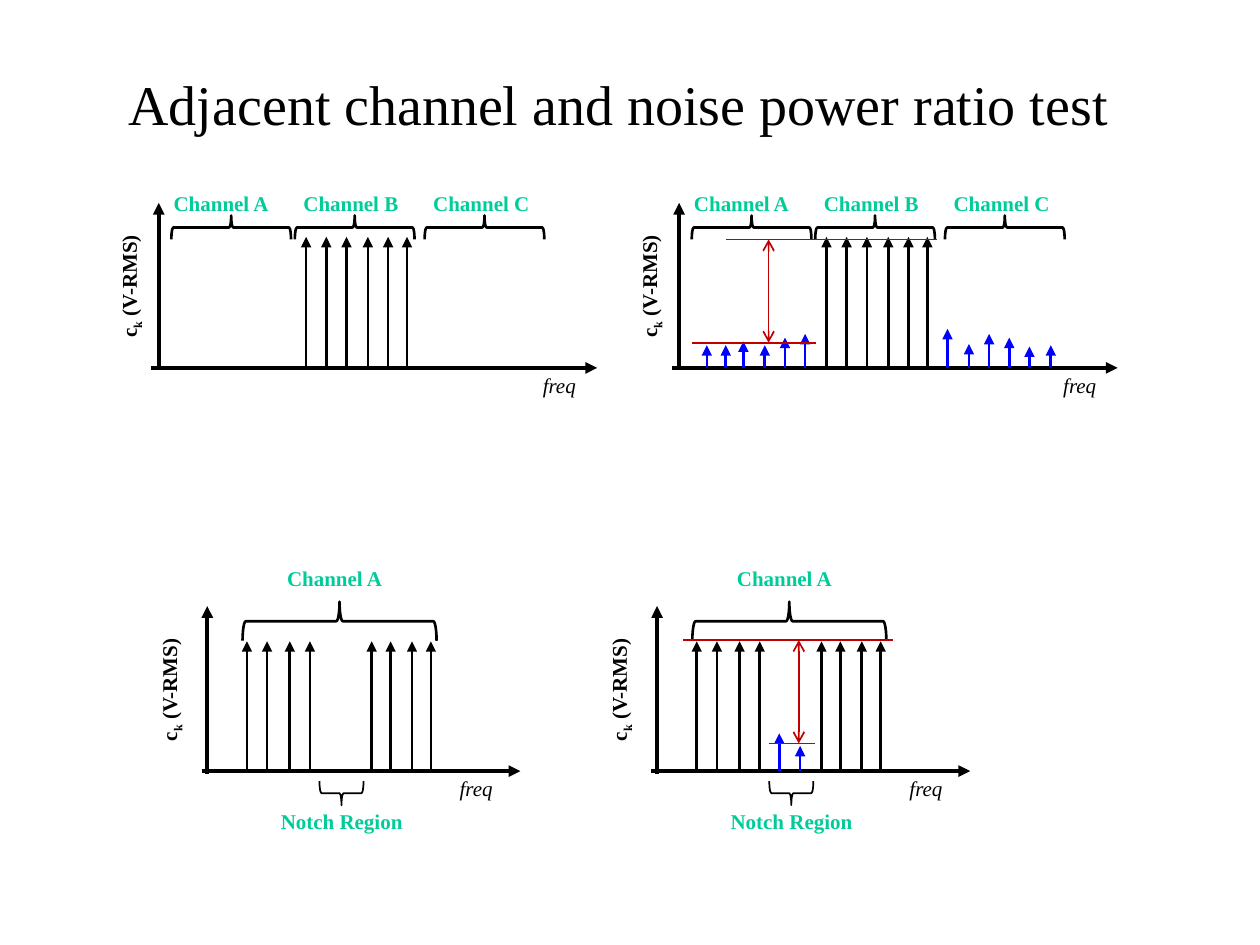
from lxml.etree import SubElement
from pptx import Presentation
from pptx.dml.color import RGBColor
from pptx.enum.shapes import MSO_CONNECTOR, MSO_SHAPE
from pptx.enum.text import MSO_ANCHOR, MSO_AUTO_SIZE, PP_ALIGN
from pptx.oxml.ns import qn
from pptx.util import Inches, Pt

INK = {"black": "000000", "blue": "0000FF", "red": "C00000", "green": "00CC99"}
FONT = "Times New Roman"
WIDE, HIGH = Inches(10), Inches(7.5)
COLS, ROWS = 100, 75


def col(n):
    """Turn grid columns into a length."""
    return round(WIDE * n / COLS)


def row(n):
    """Turn grid rows into a length."""
    return round(HIGH * n / ROWS)


def tint(name):
    """Look up a colour by name."""
    return RGBColor.from_string(INK[name])


def style(run, size, color, bold=False, slant=False):
    """Set the look of one run."""
    font = run.font
    font.name, font.size = FONT, Pt(size)
    font.bold, font.italic = bold, slant
    font.color.rgb = tint(color)


def title(slide, text):
    """Fill and place the title."""
    box = slide.shapes.title
    box.left, box.top, box.width, box.height = col(9.2), row(3.8), col(85), row(8.8)
    frame = box.text_frame
    frame.vertical_anchor = MSO_ANCHOR.MIDDLE
    para = frame.paragraphs[0]
    para.alignment = PP_ALIGN.LEFT
    run = para.add_run()
    run.text = text
    style(run, 32, "black")


def label(slide, x, y, wide, parts, color="black", bold=True, slant=False):
    """Add a text box, one run for each part and its baseline shift."""
    box = slide.shapes.add_textbox(col(x), row(y), col(wide), row(3))
    frame = box.text_frame
    frame.word_wrap = True
    frame.auto_size = MSO_AUTO_SIZE.SHAPE_TO_FIT_TEXT
    para = frame.paragraphs[0]
    for text, shift in parts:
        run = para.add_run()
        run.text = text
        style(run, 12, color, bold, slant)
        if shift:
            run.font._element.set("baseline", str(shift))
    return box


def line(slide, x1, y1, x2, y2, color="black", width=1.5, head=None, tail=None):
    """Draw a straight line with optional arrowheads."""
    link = slide.shapes.add_connector(
        MSO_CONNECTOR.STRAIGHT, col(x1), row(y1), col(x2), row(y2))
    link.line.color.rgb = tint(color)
    link.line.width = Pt(width)
    edge = link.line._get_or_add_ln()
    for tag, kind in (("a:headEnd", head), ("a:tailEnd", tail)):
        if kind:
            SubElement(edge, qn(tag), type=kind)
    SubElement(link._element.spPr, qn("a:effectLst"))


def stems(slide, xs, tops, base, color="black"):
    """Draw a row of upright arrows."""
    for x, top in zip(xs, tops):
        line(slide, x, base, x, top, color, tail="triangle")


def brace(slide, x, y, span, depth, turn=270, width=1.5):
    """Draw a turned brace centred on a point."""
    item = slide.shapes.add_shape(
        MSO_SHAPE.RIGHT_BRACE, col(x - depth / 2), row(y - span / 2),
        col(depth), row(span))
    item.rotation = turn
    item.shadow.inherit = False
    item.fill.background()
    item.line.color.rgb = tint("black")
    item.line.width = Pt(width)


def axes(slide, x, base, start, end, side, wide, freq):
    """Draw both axes of a plot and name them."""
    line(slide, x, base + 0.2, x, base - 13.1, width=2.25, tail="triangle")
    line(slide, start, base, end, base, width=2.25, tail="triangle")
    name = label(slide, side - wide / 2, base - 1.4 - wide / 2 - 1.5, wide,
                 [("c", 0), ("k", -25000), (" (V-RMS)", 0)])
    name.rotation = 270
    label(slide, freq, base - 0.1, 8, [("freq", 0)], bold=False, slant=True)


def gap(slide, x, top, low, upper, lower):
    """Mark the ratio between two levels in red."""
    line(slide, lower[0], low, lower[1], low, "red", 1)
    line(slide, x, top, x, low, "red", 1, "arrow", "arrow")
    line(slide, upper[0], top, upper[1], top, "red", 1)


def trio(slide, dx):
    """Draw a plot of three channels with tones in the middle one."""
    axes(slide, dx + 12.6, 29.2, dx + 12, dx + 47.4, dx + 10.2, 11.6, dx + 42.1)
    stems(slide, [dx + x for x in (24.3, 25.9, 27.5, 29.2, 30.8, 32.3)],
          [18.8] * 6, 29.2)
    for i, mid in enumerate((18.35, 28.15, 38.45)):
        label(slide, dx + 12.8 + 10.3 * i, 14.6, 10.3,
              [(f"Channel {'ABC'[i]}", 0)], "green")
        brace(slide, dx + mid, 18.05, 9.5, 1.9)


def notch(slide, dx):
    """Draw a plot of one channel with a notch."""
    axes(slide, dx + 16.45, 61.2, dx + 16, dx + 41.3, dx + 13.4, 14, dx + 35.5)
    stems(slide, [dx + x for x in (19.6, 21.2, 23, 24.6, 29.5, 31, 32.7, 34.2)],
          [50.9] * 8, 61.2)
    label(slide, dx + 21.8, 44.4, 10.2, [("Channel A", 0)], "green")
    brace(slide, dx + 26.95, 49.3, 15.4, 3.1)
    label(slide, dx + 21.3, 63.7, 12.9, [("Notch Region", 0)], "green")
    brace(slide, dx + 27.1, 62.95, 3.5, 1.9, 90, 1)


def main():
    """Build the slide and save it."""
    deck = Presentation()
    deck.slide_width, deck.slide_height = WIDE, HIGH
    slide = deck.slides.add_slide(deck.slide_layouts[5])
    title(slide, "Adjacent channel and noise power ratio test")
    for dx in (0, 41.3):
        trio(slide, dx)
    stems(slide, (56.1, 57.6, 59, 60.7, 62.3, 63.9),
          (27.4, 27.4, 27.1, 27.4, 26.8, 26.5), 29.2, "blue")
    stems(slide, (75.2, 76.9, 78.5, 80.1, 81.7, 83.4),
          (26.1, 27.3, 26.5, 26.8, 27.5, 27.4), 29.2, "blue")
    gap(slide, 61, 19, 27.2, (57.6, 74.4), (54.9, 64.8))
    for dx in (0, 35.7):
        notch(slide, dx)
    stems(slide, (61.85, 63.5), (58.2, 59.2), 61.2, "blue")
    gap(slide, 63.4, 50.8, 59, (54.2, 70.9), (61, 64.7))
    deck.save("out.pptx")


if __name__ == "__main__":
    main()
